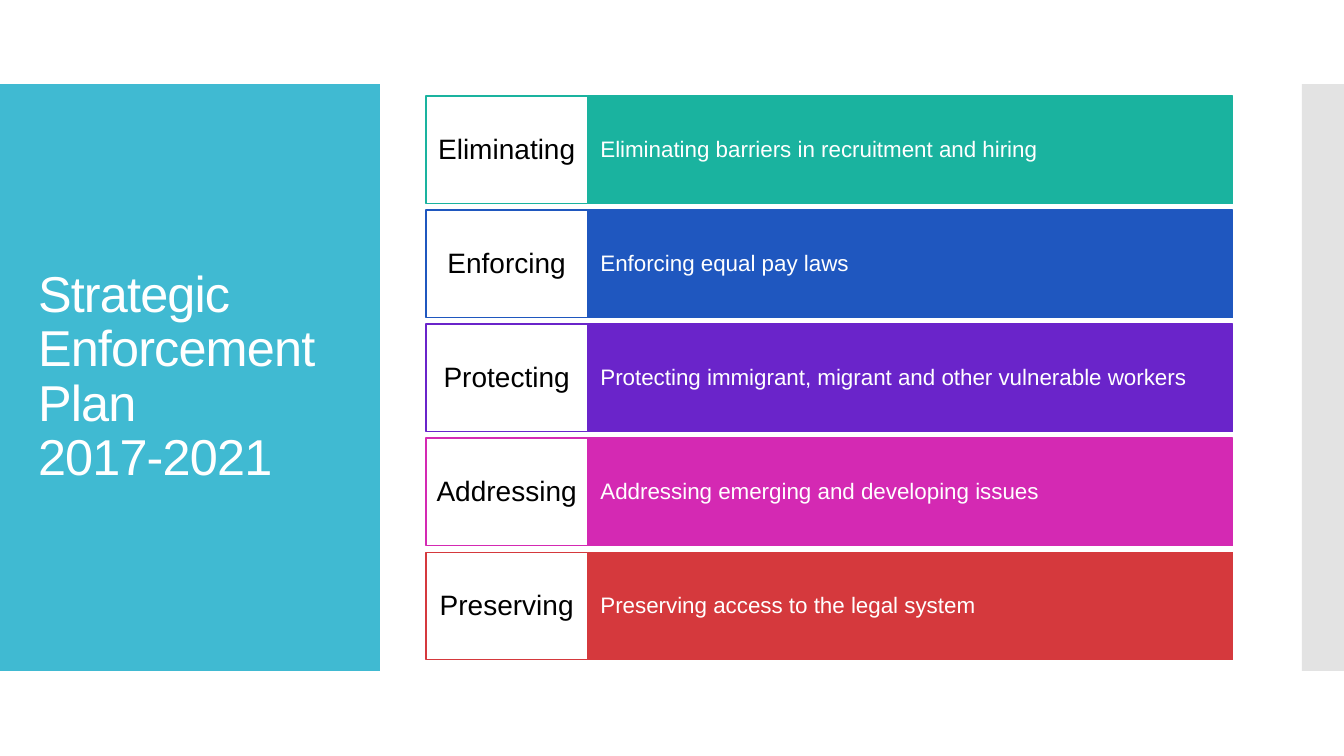
import copy

import pptx
import pptx.dml.color
import pptx.enum.shapes
import pptx.enum.text
import pptx.util

RGBColor = pptx.dml.color.RGBColor
ALIGN = pptx.enum.text.PP_ALIGN
MIDDLE = pptx.enum.text.MSO_ANCHOR.MIDDLE

PX = 914400 / 100.8
WHITE = RGBColor(0xFF, 0xFF, 0xFF)
BLACK = RGBColor(0x00, 0x00, 0x00)
PANEL_BLUE = RGBColor(0x40, 0xBA, 0xD2)
STRIP_GREY = RGBColor(0xE3, 0xE3, 0xE3)
TEAL = RGBColor(0x1A, 0xB3, 0x9F)
BLUE = RGBColor(0x1F, 0x57, 0xBF)
PURPLE = RGBColor(0x6A, 0x24, 0xCA)
MAGENTA = RGBColor(0xD4, 0x29, 0xB3)
RED = RGBColor(0xD5, 0x39, 0x3D)

TITLE = "Strategic Enforcement Plan \v2017-2021"
PRIORITIES = [
    ("Eliminating", "Eliminating barriers in recruitment and hiring", TEAL),
    ("Enforcing", "Enforcing equal pay laws", BLUE),
    ("Protecting", "Protecting immigrant, migrant and other vulnerable workers", PURPLE),
    ("Addressing", "Addressing emerging and developing issues", MAGENTA),
    ("Preserving", "Preserving access to the legal system", RED),
]


def px(length):
    return pptx.util.Emu(round(length * PX))


def set_attributes(target, values):
    for name, value in values.items():
        setattr(target, name, value)


def add_rectangle(slide, box, fill, line=None):
    shape = slide.shapes.add_shape(
        pptx.enum.shapes.MSO_SHAPE.RECTANGLE, *map(px, box))
    shape.shadow.inherit = False
    shape.fill.solid()
    shape.fill.fore_color.rgb = fill
    if line is None:
        shape.line.fill.background()
    else:
        shape.line.color.rgb = line
        shape.line.width = pptx.util.Pt(0.75)
    return shape


def write_text(shape, text, size, color, alignment, insets):
    """Fill the shape with one vertically centred paragraph."""
    frame = shape.text_frame
    horizontal, vertical = map(px, insets)
    set_attributes(frame, {
        "word_wrap": True, "vertical_anchor": MIDDLE,
        "auto_size": pptx.enum.text.MSO_AUTO_SIZE.NONE,
        "margin_left": horizontal, "margin_right": horizontal,
        "margin_top": vertical, "margin_bottom": vertical,
    })
    paragraph = frame.paragraphs[0]
    paragraph.text = text
    set_attributes(paragraph, {"alignment": alignment, "line_spacing": 0.9})
    for run in paragraph.runs:
        set_attributes(run.font, {"name": "Arial", "size": pptx.util.Pt(size)})
        run.font.color.rgb = color
    return paragraph


def add_title_panel(slide, box):
    left, top, width, height = box
    add_rectangle(slide, box, PANEL_BLUE)
    title = slide.shapes.title
    title.element.getparent().append(title.element)  # in front of the panel
    set_attributes(title, {
        "left": px(left + 28), "top": px(top + 40),
        "width": px(width - 55), "height": px(height - 80),
    })
    paragraph = write_text(title, TITLE, 36, WHITE, ALIGN.LEFT, (10, 5))
    # Tighter letters, and the line break in the same format
    for run in paragraph.runs:
        run.font._element.set("spc", "-60")
    for line_break in paragraph._p.findall(pptx.oxml.ns.qn("a:br")):
        line_break.append(copy.deepcopy(paragraph.runs[0].font._element))


def add_priorities(slide, box, gap=6):
    left, top, width, height = box
    pitch = (height + gap) / len(PRIORITIES)
    row_height = pitch - gap
    label_width = width / 5
    for index, (label, description, color) in enumerate(PRIORITIES):
        row_top = top + index * pitch
        bar = add_rectangle(
            slide, (left + label_width, row_top, width - label_width, row_height),
            color, color)
        write_text(bar, description, 16, WHITE, ALIGN.LEFT, (13, 27))
        cell = add_rectangle(
            slide, (left, row_top, label_width, row_height), WHITE, color)
        write_text(cell, label, 20, BLACK, ALIGN.CENTER, (8, 11))


def main():
    presentation = pptx.Presentation()
    set_attributes(presentation, {"slide_width": px(1344), "slide_height": px(756)})
    slide = presentation.slides.add_slide(presentation.slide_layouts[5])
    slide.background.fill.solid()
    slide.background.fill.fore_color.rgb = WHITE

    add_title_panel(slide, (0, 84, 380, 587))
    add_rectangle(slide, (1302, 84, 42, 587), STRIP_GREY)
    add_priorities(slide, (426, 96, 807, 564))
    presentation.save("out.pptx")


if __name__ == "__main__":
    main()
